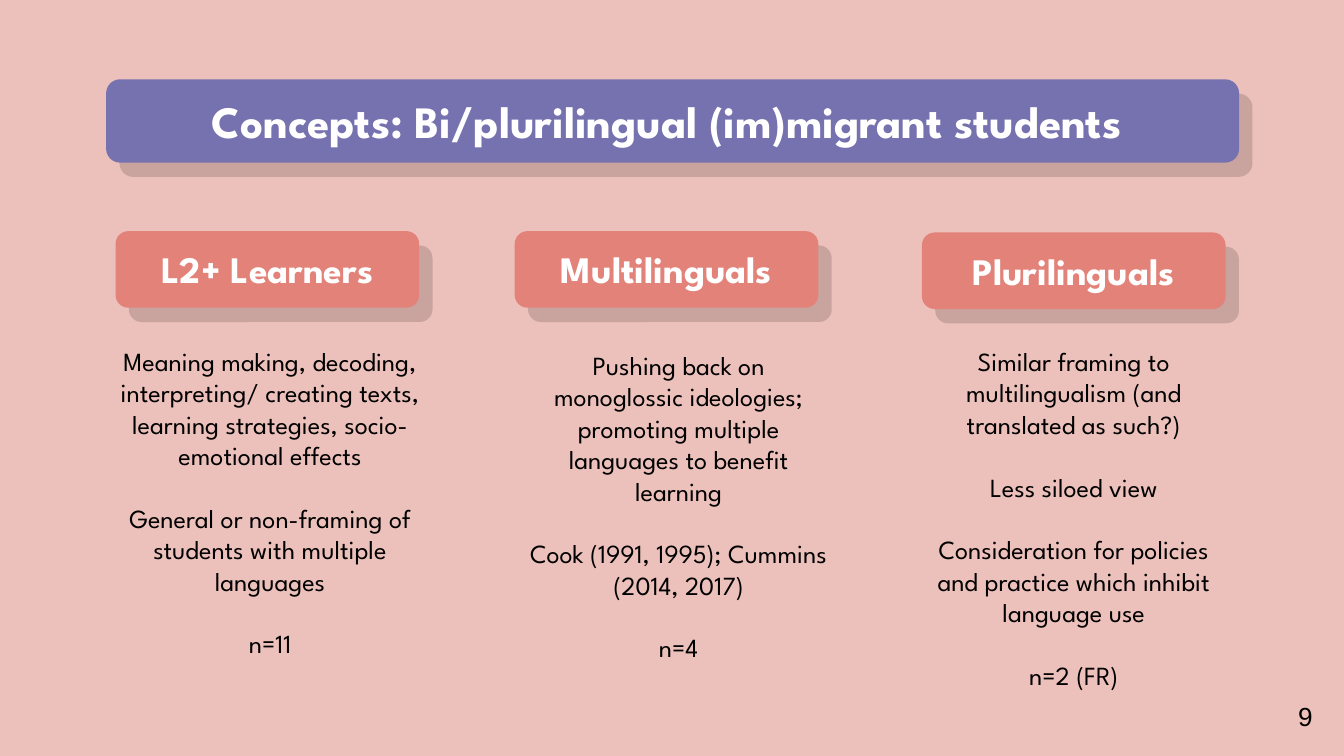
import pptx
import pptx.dml.color
import pptx.enum.shapes
import pptx.enum.text
import pptx.oxml
import pptx.oxml.ns
import pptx.util
from pptx.util import Inches

RGBColor = pptx.dml.color.RGBColor
PINK = RGBColor(0xED, 0xC1, 0xBB)
PURPLE = RGBColor(0x76, 0x71, 0xAF)
CORAL = RGBColor(0xE2, 0x82, 0x79)
WHITE = RGBColor(0xFF, 0xFF, 0xFF)
BLACK = RGBColor(0, 0, 0)
FONT = "League Spartan"
CENTER = pptx.enum.text.PP_ALIGN.CENTER
LEFT = pptx.enum.text.PP_ALIGN.LEFT
PARAGRAPH_GAP = 16.8

TITLE = "Concepts: Bi/plurilingual (im)migrant students "
COLUMNS = [
    ((0.86, 1.72), 0.01, (-0.07, 0.75), "L2+ Learners", [
        "Meaning making, decoding, interpreting/ creating texts, "
        "learning strategies, socio-emotional effects",
        "General or non-framing of students with multiple languages",
        "n=11"], 2.79),
    ((3.83, 1.72), 0.01, (0, 0.78), "Multilinguals", [
        "Pushing back on monoglossic ideologies; promoting multiple "
        "languages to benefit learning",
        "Cook (1991, 1995); Cummins (2014, 2017)",
        "n=4"], 2.56),
    ((6.86, 1.73), 0.02, (-0.09, 0.74), "Plurilinguals", [
        "Similar framing to multilingualism (and translated as such?)",
        "Less siloed view",
        "Consideration for policies and practice which inhibit language use",
        "n=2 (FR)"], 2.79),
]


def add_card(slide, left, top, width, height, color):
    card = slide.shapes.add_shape(
        pptx.enum.shapes.MSO_SHAPE.ROUNDED_RECTANGLE,
        Inches(left), Inches(top), Inches(width), Inches(height))
    card.fill.solid()
    card.fill.fore_color.rgb = color
    card.line.fill.background()
    card.shadow.inherit = False
    effects = card._element.spPr.find(pptx.oxml.ns.qn("a:effectLst"))
    effects.append(pptx.oxml.parse_xml(
        f'<a:outerShdw {pptx.oxml.ns.nsdecls("a")} dist="{pptx.util.Pt(10.5)}" '
        f'dir="{47 * 60000}" algn="bl" rotWithShape="0">'
        '<a:srgbClr val="000000"><a:alpha val="14000"/></a:srgbClr>'
        '</a:outerShdw>'))
    return card


def write(frame, paragraphs, size, color, bold=False, font=FONT, align=CENTER):
    frame.word_wrap = True
    frame.margin_left = frame.margin_right = Inches(0.1)
    frame.margin_top = frame.margin_bottom = Inches(0.1)
    for index, words in enumerate(paragraphs):
        paragraph = frame.add_paragraph() if index else frame.paragraphs[0]
        paragraph.alignment = align
        if index:
            paragraph.space_before = pptx.util.Pt(PARAGRAPH_GAP)
        run = paragraph.add_run()
        run.text = words
        run.font.name = font
        run.font.size = pptx.util.Pt(size)
        run.font.bold = bold
        run.font.color.rgb = color


def add_text(slide, left, top, width, height, paragraphs, size, color, **style):
    box = slide.shapes.add_textbox(
        Inches(left), Inches(top), Inches(width), Inches(height))
    write(box.text_frame, paragraphs, size, color, **style)
    box.text_frame.auto_size = pptx.enum.text.MSO_AUTO_SIZE.SHAPE_TO_FIT_TEXT


def add_banner(slide, left, top, width, height):
    banner = add_card(slide, left, top, width, height, PURPLE)
    title = slide.shapes.title
    title._element.addprevious(banner._element)
    title.left, title.top = Inches(left), Inches(top)
    title.width, title.height = Inches(width), Inches(height)
    write(title.text_frame, [TITLE], 24, WHITE, bold=True)
    title.text_frame.vertical_anchor = pptx.enum.text.MSO_ANCHOR.MIDDLE
    title.text_frame.auto_size = pptx.enum.text.MSO_AUTO_SIZE.NONE


def add_column(slide, corner, label_drop, body_offset, heading, body, body_height):
    left, top = corner
    dx, dy = body_offset
    add_card(slide, left, top, 2.26, 0.57, CORAL)
    add_text(slide, left, top + label_drop, 2.26, 0.54, [heading], 20, WHITE,
             bold=True)
    add_text(slide, left + dx, top + dy, 2.44, body_height, body, 14, BLACK)


def main():
    deck = pptx.Presentation()
    deck.slide_width = Inches(10)
    deck.slide_height = deck.slide_width * 9 // 16
    slide = deck.slides.add_slide(deck.slide_layouts.get_by_name("Title Only"))
    slide.background.fill.solid()
    slide.background.fill.fore_color.rgb = PINK
    add_banner(slide, 0.79, 0.59, 8.43, 0.62)
    for column in COLUMNS:
        add_column(slide, *column)
    add_text(slide, 9.56, 5.11, 0.35, 0.44, ["9"], 14, BLACK,
             font="Arial", align=LEFT)
    deck.save("out.pptx")


if __name__ == "__main__":
    main()
